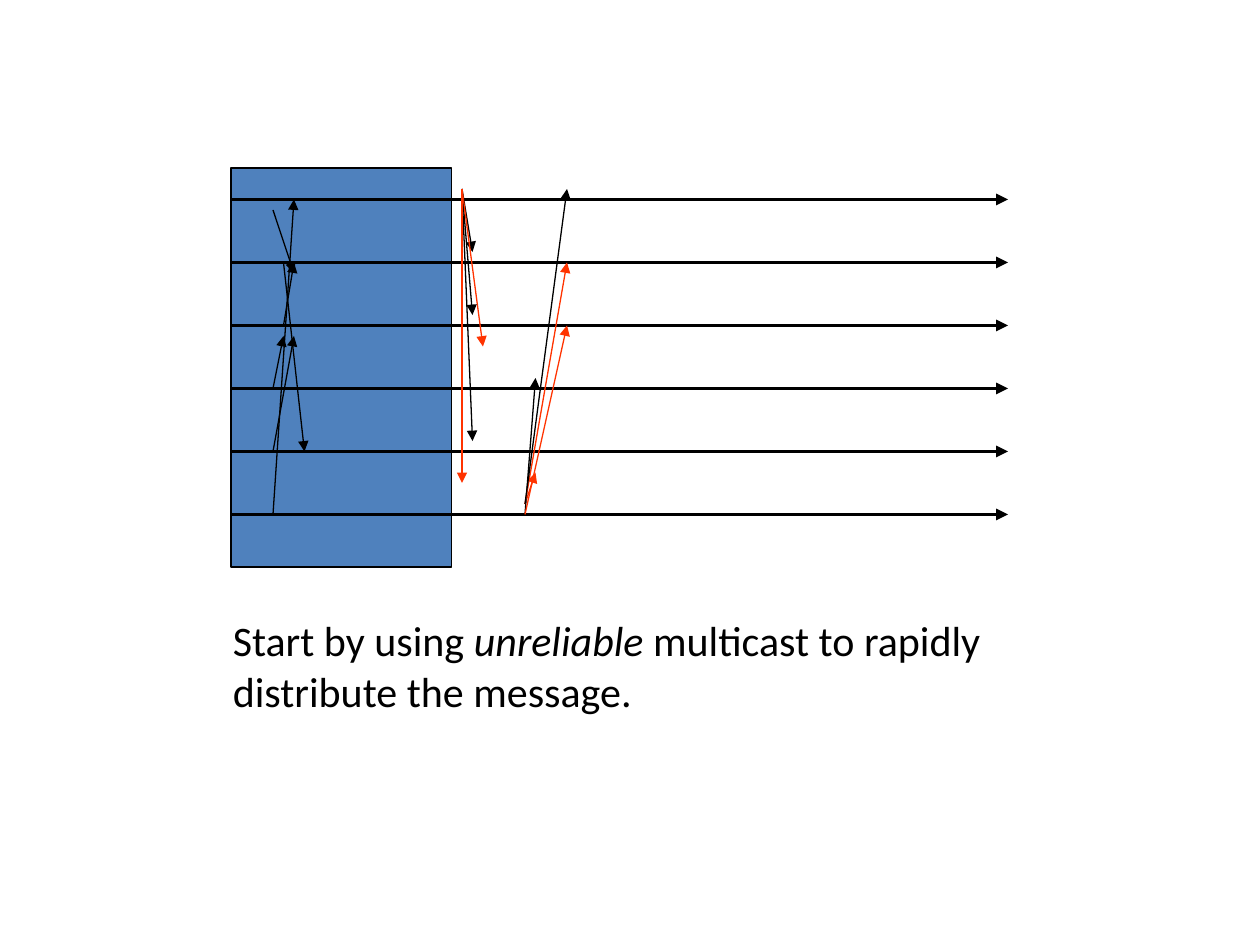
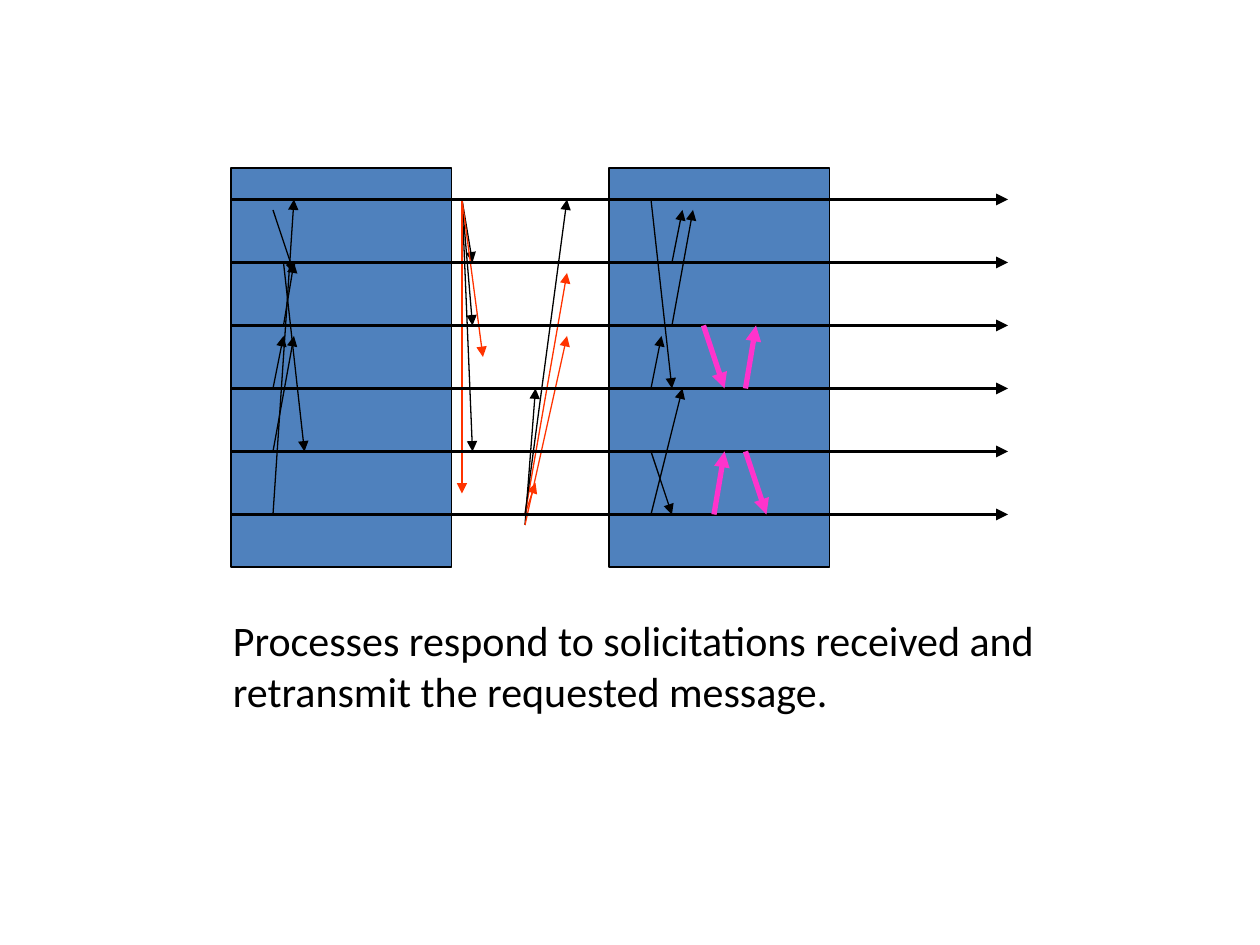
from lxml.etree import SubElement
from pptx import Presentation
from pptx.dml.color import RGBColor
from pptx.enum.shapes import MSO_CONNECTOR as Connector, MSO_SHAPE as Shape
from pptx.enum.text import MSO_AUTO_SIZE as AutoSize
from pptx.oxml.ns import qn
from pptx.util import Inches, Pt

BLACK, BLUE, RED, PINK = "000000", "4F81BD", "FF3300", "FF33CC"
FONT = "Calibri"
GRID = 12

FIRST_ROUND = [
    (27, 25, 29, 43), (26, 20, 28, 26), (26, 49, 28, 19),
    (26, 37, 27, 32), (26, 43, 28, 32), (27, 31, 28, 25),
]
SECOND_ROUND = [
    (62, 19, 64, 37), (62, 43, 64, 49), (62, 49, 65, 37),
    (62, 37, 63, 32), (64, 31, 66, 20), (64, 25, 65, 20),
]
MULTICASTS = [
    (44, 18, 45, 24, BLACK), (44, 18, 45, 30, BLACK), (44, 18, 46, 33, RED),
    (44, 18, 45, 42, BLACK), (44, 18, 44, 46, RED), (50, 48, 51, 45, RED),
    (50, 49, 51, 36, BLACK), (50, 49, 54, 31, RED), (50, 48, 54, 25, RED),
    (50, 48, 54, 18, BLACK),
]
RETRANSMISSIONS = [
    (67, 31, 69, 37), (68, 49, 69, 43), (71, 43, 73, 49), (71, 37, 72, 31),
]


def color(value):
    return RGBColor.from_string(value)


def grid(steps):
    return Inches(steps / GRID)


class Diagram:
    def __init__(self, presentation):
        self.presentation = presentation
        self.slide = None

    def new_slide(self):
        blank = self.presentation.slide_layouts[6]
        self.slide = self.presentation.slides.add_slide(blank)

    def arrow(self, shapes, points, line_color=BLACK, width=0.75):
        connector = shapes.add_connector(Connector.STRAIGHT, *map(grid, points))
        connector.line.color.rgb = color(line_color)
        connector.line.width = Pt(width)
        SubElement(connector.line._get_or_add_ln(), qn("a:tailEnd"), type="triangle")
        SubElement(connector._element.spPr, qn("a:effectLst"))

    def gossip_round(self, left, messages):
        shapes = self.slide.shapes.add_group_shape().shapes
        block = shapes.add_shape(Shape.RECTANGLE, *map(grid, (left, 16, 21, 38)))
        block.shadow.inherit = False
        block.fill.solid()
        block.fill.fore_color.rgb = color(BLUE)
        block.line.color.rgb = color(BLACK)
        block.line.width = Pt(0.75)
        for message in messages:
            self.arrow(shapes, message)

    def multicasts(self, drop=0):
        shapes = self.slide.shapes.add_group_shape().shapes
        for x1, y1, x2, y2, line_color in MULTICASTS:
            self.arrow(shapes, (x1, y1 + drop, x2, y2 + drop), line_color)

    def timelines(self):
        for y in range(19, 50, 6):
            self.arrow(self.slide.shapes, (22, y, 96, y), width=2.25)

    def retransmissions(self):
        for message in RETRANSMISSIONS:
            self.arrow(self.slide.shapes, message, PINK, 3)

    def caption(self, width, runs):
        box = self.slide.shapes.add_textbox(
            Inches(1.75), Inches(4.83), Inches(width), Inches(0.91))
        frame = box.text_frame
        frame.word_wrap = True
        frame.auto_size = AutoSize.SHAPE_TO_FIT_TEXT
        paragraph = frame.paragraphs[0]
        for text, italic in runs:
            run = paragraph.add_run()
            run.text = text
            run.font.name = FONT
            run.font.size = Pt(24)
            run.font.italic = italic
            run.font.color.rgb = color(BLACK)


def main():
    presentation = Presentation()
    presentation.slide_width = Inches(10)
    presentation.slide_height = Inches(7.5)
    diagram = Diagram(presentation)

    diagram.new_slide()
    diagram.gossip_round(22, FIRST_ROUND)
    diagram.timelines()
    diagram.multicasts()
    diagram.caption(6.5, [
        ("Start by using ", False),
        ("unreliable ", True),
        ("multicast to rapidly distribute the message.", False),
    ])

    diagram.new_slide()
    diagram.multicasts(drop=1)
    diagram.gossip_round(58, SECOND_ROUND)
    diagram.gossip_round(22, FIRST_ROUND)
    diagram.timelines()
    diagram.caption(6.75, [
        ("Processes respond to solicitations received and "
         "retransmit the requested message.", False),
    ])
    diagram.retransmissions()

    presentation.save("out.pptx")


if __name__ == "__main__":
    main()
